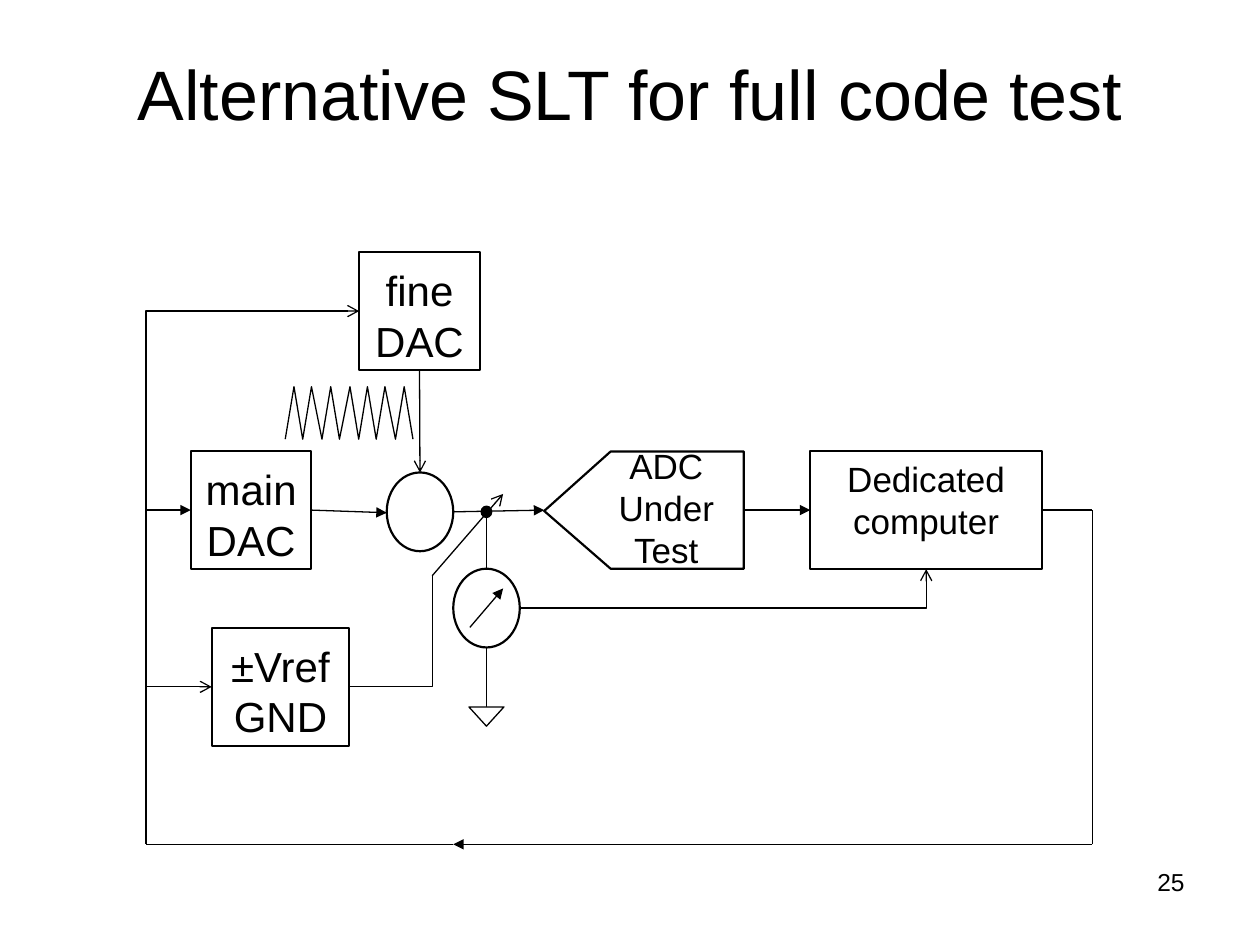
from lxml.etree import SubElement
from pptx import Presentation
from pptx.dml.color import RGBColor
from pptx.enum.shapes import MSO_CONNECTOR, MSO_SHAPE
from pptx.enum.text import MSO_ANCHOR, PP_ALIGN
from pptx.oxml.ns import qn
from pptx.util import Pt

COLORS = {"ink": "000000", "paper": "FFFFFF"}
TOP, LEFT, BOTTOM, RIGHT = range(4)


class Diagram:
    """Drawing style and current slide; all lengths are in points."""

    font = "Arial"
    thin, thick = 0.75, 1.25

    def __init__(self, slide):
        self.slide = slide

    def color(self, name):
        return RGBColor.from_string(COLORS[name])

    def style(self, shape, weight, fill="paper"):
        shape.shadow.inherit = False
        if fill:
            shape.fill.solid()
            shape.fill.fore_color.rgb = self.color(fill)
        else:
            shape.fill.background()
        shape.line.color.rgb = self.color("ink")
        shape.line.width = Pt(weight)

    def set_text(self, shape, text, size, align, anchor=MSO_ANCHOR.TOP):
        frame = shape.text_frame
        frame.word_wrap = True
        frame.vertical_anchor = anchor
        frame.text = text
        for paragraph in frame.paragraphs:
            paragraph.alignment = align
            for run in paragraph.runs:
                run.font.size = Pt(size)
                run.font.name = self.font
                run.font.color.rgb = self.color("ink")

    def text(self, left, top, width, height, text, size,
             align=PP_ALIGN.CENTER, anchor=MSO_ANCHOR.TOP):
        box = self.slide.shapes.add_textbox(Pt(left), Pt(top), Pt(width), Pt(height))
        self.set_text(box, text, size, align, anchor)

    def box(self, left, top, width, height, text, size, inset=7.2):
        shape = self.slide.shapes.add_shape(
            MSO_SHAPE.RECTANGLE, Pt(left), Pt(top), Pt(width), Pt(height))
        self.style(shape, self.thick)
        self.set_text(shape, text, size, PP_ALIGN.CENTER)
        shape.text_frame.margin_top = Pt(inset)
        return shape

    def ellipse(self, center_x, center_y, width, height, weight=thick, fill="paper"):
        shape = self.slide.shapes.add_shape(
            MSO_SHAPE.OVAL, Pt(center_x - width / 2), Pt(center_y - height / 2),
            Pt(width), Pt(height))
        self.style(shape, weight, fill)

    def outline(self, points, weight=thin, closed=True):
        builder = self.slide.shapes.build_freeform(*points[0], scale=Pt(1))
        builder.add_line_segments(points[1:], close=closed)
        self.style(builder.convert_to_shape(), weight, "paper" if closed else None)

    def line(self, start, end, head=None, tail=None, begin=None, finish=None, elbow=False):
        """Straight line, or an elbow that leaves horizontally and turns once."""
        kind = MSO_CONNECTOR.ELBOW if elbow else MSO_CONNECTOR.STRAIGHT
        connector = self.slide.shapes.add_connector(
            kind, *(Pt(value) for value in (*start, *end)))
        connector.line.color.rgb = self.color("ink")
        connector.line.width = Pt(self.thin)
        if begin:
            connector.begin_connect(*begin)
        if finish:
            connector.end_connect(*finish)
        properties = connector._element.spPr
        if elbow:
            properties.find(qn("a:prstGeom")).set("prst", "bentConnector2")
        for tag, arrow in (("a:headEnd", head), ("a:tailEnd", tail)):
            if arrow:
                SubElement(properties.find(qn("a:ln")), qn(tag), type=arrow)
        SubElement(properties, qn("a:effectLst"))


def main():
    presentation = Presentation()
    presentation.slide_width, presentation.slide_height = Pt(720), Pt(540)
    diagram = Diagram(presentation.slides.add_slide(presentation.slide_layouts[6]))

    # Title and page number
    diagram.text(36, 21.6, 648, 62.6, "Alternative SLT for full code test", 40,
                 anchor=MSO_ANCHOR.MIDDLE)
    diagram.text(516, 491.75, 168, 37.5, "25", 14, PP_ALIGN.RIGHT)

    # Main signal row and feedback loop
    row, row_top, height = 291.5, 257.75, 67.5
    bus, loop_right, loop_bottom = 83.5, 624.25, 482.5
    sum_x, node_x, meter_y = 240, 278, 347.5
    meter_width, meter_height = 38, 45
    sum_right = sum_x + meter_width / 2

    # ADC under test
    adc_left, adc_shoulder, adc_right = 311, 349, 424.75
    adc_bottom = row_top + height
    diagram.outline([(adc_shoulder, row_top), (adc_right, row_top),
                     (adc_right, adc_bottom), (adc_shoulder, adc_bottom),
                     (adc_left, row)], diagram.thick)
    diagram.text(328.5, 250.5, 104.5, 78.5, "ADC\nUnder\nTest", 20)

    # Blocks
    computer = diagram.box(463, row_top, 132.5, height, "Dedicated computer", 20, 3.6)
    main_dac = diagram.box(109, row_top, 69, height, "main\vDAC", 24)
    fine_dac = diagram.box(205.25, 144, 69, height, "fine\vDAC", 24)
    reference = diagram.box(121, 358.75, 78.5, height, "±Vref\vGND", 24)

    # Sawtooth of the fine DAC
    wave_left, wave_top, wave_bottom, step = 162.75, 221, 250.75, 5.25
    diagram.outline([(wave_left + index * step, wave_top if index % 2 else wave_bottom)
                     for index in range(15)], closed=False)

    # Summing point, meter and ground
    diagram.ellipse(sum_x, 292.5, meter_width, meter_height)
    diagram.ellipse(node_x, meter_y, meter_width, meter_height)
    diagram.line((268.5, 358.5), (287.5, 336.25), tail="triangle")
    meter_top, meter_bottom = meter_y - meter_height / 2, meter_y + meter_height / 2
    diagram.line((node_x, meter_top), (node_x, row))
    diagram.line((node_x, meter_bottom), (node_x, 404))
    diagram.outline([(268.5, 404), (287.5, 404), (node_x, 415)])
    diagram.ellipse(node_x, 292.5, 6, 6.5, diagram.thin, "ink")

    # Signal path from the DACs to the computer
    diagram.line((178, 293), (sum_x - meter_width / 2, 293), tail="triangle",
                 begin=(main_dac, RIGHT))
    diagram.line((sum_x, 211.5), (sum_x, 270), tail="arrow", begin=(fine_dac, BOTTOM))
    diagram.line((sum_right, 292.5), (adc_left, row), tail="triangle")
    diagram.line((adc_right, row), (463, row), tail="triangle", finish=(computer, LEFT))

    # Feedback from the computer to the bus
    diagram.line((595.5, row), (loop_right, row), begin=(computer, RIGHT))
    diagram.line((loop_right, row), (loop_right, loop_bottom))
    diagram.line((loop_right, loop_bottom), (sum_right, loop_bottom), tail="triangle")
    diagram.line((sum_right, loop_bottom), (bus, loop_bottom))
    diagram.line((bus, row), (bus, loop_bottom))

    # Bus branches
    diagram.line((bus, row), (109, row), tail="triangle", finish=(main_dac, LEFT))
    diagram.line((bus, 392.5), (121, 392.5), tail="arrow", finish=(reference, LEFT))
    diagram.line((205.25, 177.75), (bus, row), head="arrow", elbow=True)

    # Reference switch and meter readout
    diagram.line((247, 329), (287.5, 282.25), tail="arrow")
    diagram.line((199.5, 392.5), (247, 329), elbow=True)
    diagram.line((node_x + meter_width / 2, meter_y), (529.25, adc_bottom),
                 tail="arrow", elbow=True)

    presentation.save("out.pptx")


if __name__ == "__main__":
    main()
